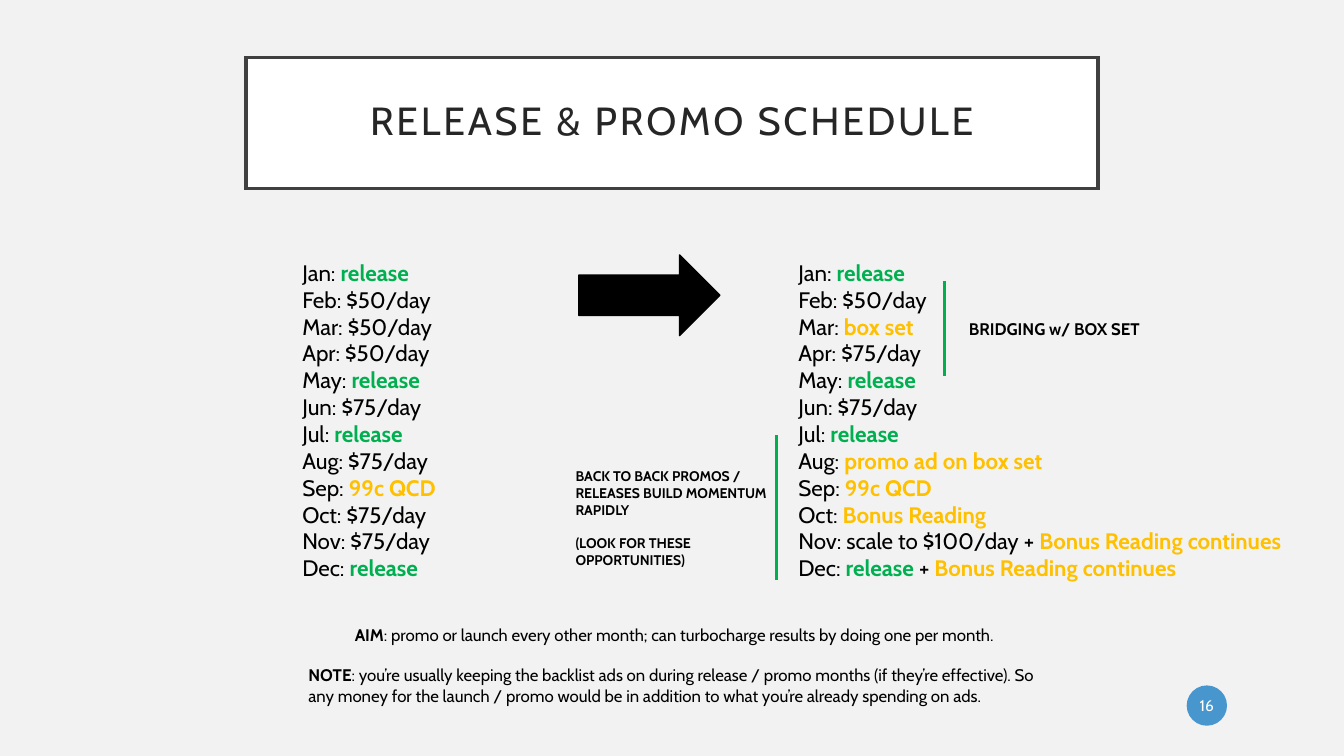
from lxml.etree import SubElement
from pptx import Presentation
from pptx.dml.color import RGBColor
from pptx.enum.shapes import MSO_CONNECTOR, MSO_SHAPE
from pptx.enum.text import MSO_ANCHOR, PP_ALIGN
from pptx.oxml.ns import qn
from pptx.util import Emu, Pt

PX = 9144  # 100 px to the inch
FONT = "Cabin"
BLACK, WHITE, GREEN, GOLD = "000000", "FFFFFF", "00B050", "FFC000"

PLAIN = {"bold": False, "color": BLACK}
STRONG = {"bold": True, "color": BLACK}
RELEASE = {"bold": True, "color": GREEN}
PROMO = {"bold": True, "color": GOLD}

BEFORE = [
    [("Jan: ", PLAIN), ("release", RELEASE)],
    [("Feb: $50/day", PLAIN)],
    [("Mar: $50/day", PLAIN)],
    [("Apr: $50/day", PLAIN)],
    [("May: ", PLAIN), ("release", RELEASE)],
    [("Jun: $75/day", PLAIN)],
    [("Jul: ", PLAIN), ("release", RELEASE)],
    [("Aug: $75/day", PLAIN)],
    [("Sep: ", PLAIN), ("99c QCD", PROMO)],
    [("Oct: $75/day", PLAIN)],
    [("Nov: $75/day", PLAIN)],
    [("Dec: ", PLAIN), ("release", RELEASE)],
]
AFTER = [
    [("Jan: ", PLAIN), ("release", RELEASE)],
    [("Feb: $50/day", PLAIN)],
    [("Mar: ", PLAIN), ("box set", PROMO)],
    [("Apr: $75/day", PLAIN)],
    [("May: ", PLAIN), ("release", RELEASE)],
    [("Jun: $75/day", PLAIN)],
    [("Jul: ", PLAIN), ("release", RELEASE)],
    [("Aug: ", PLAIN), ("promo ad on box set", PROMO)],
    [("Sep: ", PLAIN), ("99c QCD", PROMO)],
    [("Oct: ", PLAIN), ("Bonus Reading", PROMO)],
    [("Nov: scale to $100/day + ", PLAIN), ("Bonus Reading continues", PROMO)],
    [("Dec: ", PLAIN), ("release ", RELEASE), ("+ ", PLAIN),
     ("Bonus Reading continues", PROMO)],
]
MOMENTUM = [
    [("BACK TO BACK PROMOS / RELEASES BUILD MOMENTUM RAPIDLY", STRONG)],
    [("(LOOK FOR THESE OPPORTUNITIES)", STRONG)],
]
AIM = [[("AIM", STRONG),
        (": promo or launch every other month; can turbocharge results by "
         "doing one per month.", PLAIN)]]
NOTE = [[("NOTE", STRONG),
         (": you’re usually keeping the backlist ads on during release / promo "
          "months (if they’re effective). So any money for the launch / promo "
          "would be in addition to what you’re already spending on ads.", PLAIN)]]


def px(*lengths):
    return [Emu(length * PX) for length in lengths]


def rgb(value):
    return RGBColor.from_string(value)


def write(frame, paragraphs, size, gap=0, **paragraph_format):
    """Fill a frame with paragraphs, each a list of (words, format)."""
    frame.word_wrap = True
    for index, pieces in enumerate(paragraphs):
        paragraph = frame.add_paragraph() if index else frame.paragraphs[0]
        if index and gap:
            paragraph.space_before = Pt(gap)
        for name, value in paragraph_format.items():
            setattr(paragraph, name, value)
        for words, look in pieces:
            run = paragraph.add_run()
            run.text = words
            font = {"name": FONT, "size": Pt(size), "bold": look["bold"]}
            for name, value in font.items():
                setattr(run.font, name, value)
            run.font.color.rgb = rgb(look["color"])


def add_words(slide, box, paragraphs, size, gap=0):
    words = slide.shapes.add_textbox(*px(*box))
    write(words.text_frame, paragraphs, size, gap)


def add_block(slide, kind, box, fill, line=None, width=1):
    block = slide.shapes.add_shape(kind, *px(*box))
    block.shadow.inherit = False
    block.fill.solid()
    block.fill.fore_color.rgb = rgb(fill)
    if line:
        block.line.color.rgb = rgb(line)
        block.line.width = Pt(width)
    else:
        block.line.fill.background()
    return block


def set_insets(frame, across, down):
    insets = {"margin_left": across, "margin_right": across,
              "margin_top": down, "margin_bottom": down}
    for name, value in insets.items():
        setattr(frame, name, Emu(value * PX))
    frame.vertical_anchor = MSO_ANCHOR.MIDDLE


def add_marker(slide, x, top, height):
    """Green bar beside a span of months."""
    marker = slide.shapes.add_connector(
        MSO_CONNECTOR.STRAIGHT, *px(x, top, x, top + height))
    marker.line.color.rgb = rgb(GREEN)
    marker.line.width = Pt(2.5)
    SubElement(marker._element.spPr, qn("a:effectLst"))


def add_title(slide, box):
    banner = add_block(slide, MSO_SHAPE.RECTANGLE, box, WHITE, "404040", 2.5)
    SubElement(banner.line._get_or_add_ln(), qn("a:miter"), lim="800000")
    set_insets(banner.text_frame, 20, 20)
    write(banner.text_frame,
          [[("RELEASE & PROMO SCHEDULE", {"bold": False, "color": "262626"})]],
          28, alignment=PP_ALIGN.CENTER, line_spacing=0.9)
    heading = banner.text_frame.paragraphs[0].runs[0]
    heading.font._element.set("spc", "200")


def add_page_number(slide, box):
    badge = add_block(slide, MSO_SHAPE.OVAL, box, "0070C0")
    tint = badge.fill._xPr.find(qn("a:solidFill"))[0]
    SubElement(tint, qn("a:alpha"), val="70000")
    set_insets(badge.text_frame, 2, 5)
    write(badge.text_frame, [[("16", {"bold": False, "color": WHITE})]], 11,
          alignment=PP_ALIGN.CENTER)


def add_schedules(slide, box):
    """Both month lists, the arrow between them and the side remarks."""
    left, top, width, height = box
    after_left = left + 492
    add_words(slide, (left, top, 332, height), BEFORE, 16)
    add_words(slide, (after_left, top, left + width - after_left, height), AFTER, 16)
    add_block(slide, MSO_SHAPE.RIGHT_ARROW, (left + 284, top + 1, 140, 80),
              BLACK, BLACK)
    add_marker(slide, after_left + 155, top + 27, 94)
    add_marker(slide, after_left - 12, top + 180, 143)
    add_words(slide, (after_left + 169, top + 59, 225, 30),
              [[("BRIDGING w/ BOX SET", STRONG)]], 12)
    add_words(slide, (left + 271, top + 207, 225, 111), MOMENTUM, 10, gap=12)


def add_footnotes(slide, box):
    left, top, width, height = box
    add_words(slide, (left + 46, top, width - 46, 30), AIM, 12)
    add_words(slide, (left, top + 40, width - 46, height - 40), NOTE, 12)


def main():
    deck = Presentation()
    deck.slide_width, deck.slide_height = px(1333, 750)
    slide = deck.slides.add_slide(deck.slide_layouts[6])
    slide.background.fill.solid()
    slide.background.fill.fore_color.rgb = rgb("F2F2F2")

    add_title(slide, (244, 57, 845, 130))
    add_page_number(slide, (1177, 680, 40, 40))
    add_schedules(slide, (290, 252, 1084, 360))
    add_footnotes(slide, (296, 615, 788, 90))
    deck.save("out.pptx")


if __name__ == "__main__":
    main()
